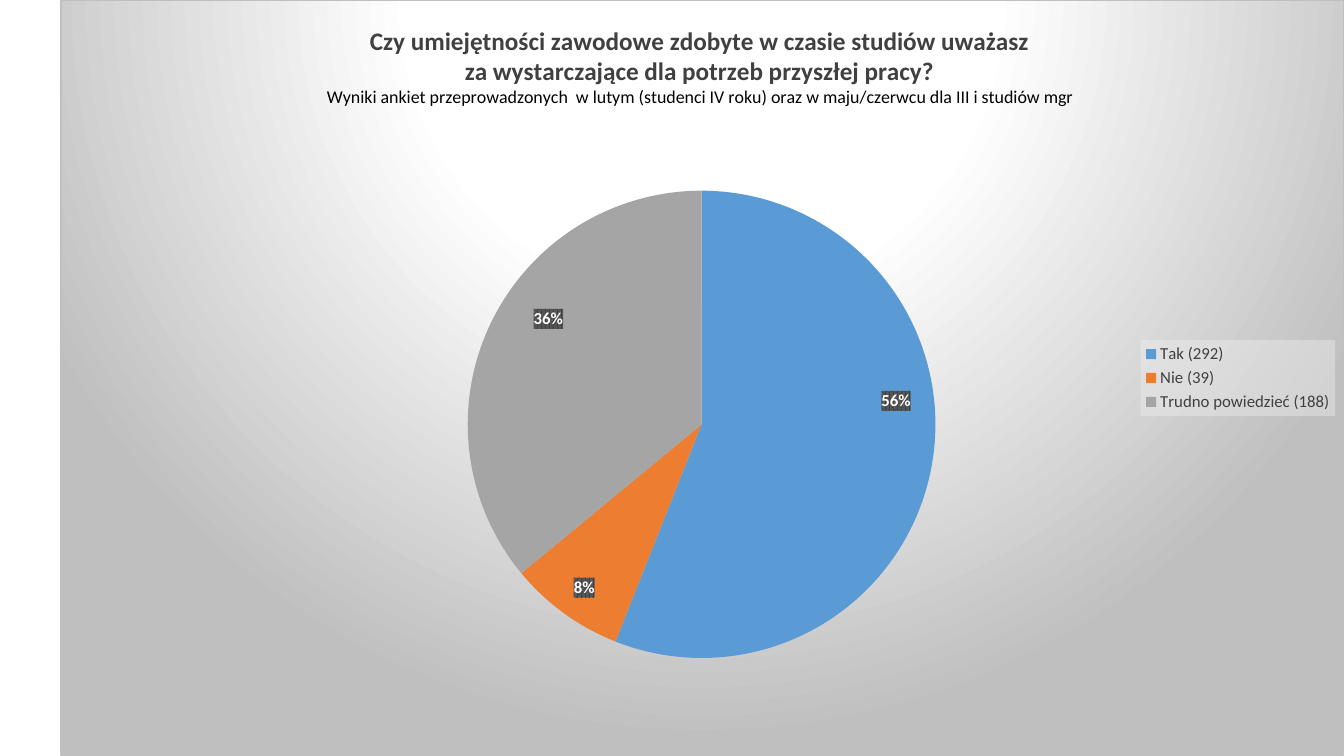
import copy

from lxml import etree
from pptx import Presentation
from pptx import util as u
from pptx.chart import data as chart_data
from pptx.dml import color
from pptx.enum import chart as chart_enum
from pptx.enum import text
from pptx.oxml import ns, parse_xml

# Name, share, colour, label shift from the slice centre
ANSWERS = [
    ("Tak (292)", 56, "5B9BD5", (0.062, -0.06)),
    ("Nie (39)", 8, "ED7D31", (-0.038, 0.091)),
    ("Trudno powiedzieć (188)", 36, "A5A5A5", (-0.037, -0.074)),
]
TITLE = [
    ("Czy umiejętności zawodowe zdobyte w czasie studiów uważasz", 18, True, "404040"),
    ("za wystarczające dla potrzeb przyszłej pracy?", 18, True, "404040"),
    ("Wyniki ankiet przeprowadzonych  w lutym (studenci IV roku) "
     "oraz w maju/czerwcu dla III i studiów mgr", 12.8, False, "000000"),
]


def rgb(value):
    return color.RGBColor.from_string(value)


def format_font(font, size, shade, bold=False):
    font.name = "Calibri"
    font.size = u.Pt(size)
    font.bold = bold
    font.color.rgb = rgb(shade)


def add_text(para, words, **style):
    span = para.add_run()
    span.text = words
    format_font(span.font, **style)


def solid(shade, opacity=100):
    return (f'<a:solidFill><a:srgbClr val="{shade}">'
            f'<a:alpha val="{opacity * 1000}"/></a:srgbClr></a:solidFill>')


def shape_style(content):
    return parse_xml(f'<c:spPr {ns.nsdecls("c", "a")}>{content}</c:spPr>')


def layout(**settings):
    """Manual chart layout in fractions of the chart area."""
    node = etree.Element(ns.qn("c:layout"))
    manual = etree.SubElement(node, ns.qn("c:manualLayout"))
    for name, value in settings.items():
        etree.SubElement(manual, ns.qn(f"c:{name}")).set("val", str(value))
    return node


def set_layout(parent, node, index):
    for old in parent.findall(ns.qn("c:layout")):
        parent.remove(old)
    parent.insert(index, node)


class SurveySlide:
    def __init__(self, deck):
        self.page = deck.slides.add_slide(deck.slide_layouts[6])

    def add_pie(self, left, top, width, height):
        data = chart_data.CategoryChartData()
        data.categories = [answer[0] for answer in ANSWERS]
        data.add_series("Series 1", [answer[1] for answer in ANSWERS])
        frame = self.page.shapes.add_chart(
            chart_enum.XL_CHART_TYPE.PIE, u.Inches(left), u.Inches(top),
            u.Inches(width), u.Inches(height), data)
        chart = frame.chart
        format_font(chart.font, 10, "000000")
        plot = chart.plots[0]
        plot.vary_by_categories = True
        for index, (_, _, shade, _) in enumerate(ANSWERS):
            fill = plot.series[0].points[index].format.fill
            fill.solid()
            fill.fore_color.rgb = rgb(shade)
        area = chart.element.find(".//" + ns.qn("c:plotArea"))
        set_layout(area, layout(layoutTarget="inner", xMode="edge", yMode="edge",
                                x=0.317, y=0.252, w=0.365, h=0.619), 0)
        return chart

    def add_background(self, chart):
        stops = "".join(
            f'<a:gs pos="{place * 1000}"><a:srgbClr val="{shade}"/></a:gs>'
            for place, shade in [(0, "FFFFFF"), (39, "FFFFFF"), (100, "BFBFBF")])
        chart.element.find(ns.qn("c:chart")).addnext(shape_style(
            f'<a:gradFill><a:gsLst>{stops}</a:gsLst><a:path path="circle">'
            '<a:fillToRect l="50000" t="-80000" r="50000" b="180000"/></a:path></a:gradFill>'
            f'<a:ln w="{u.Pt(0.75)}">{solid("BFBFBF")}</a:ln>'))

    def add_title(self, chart):
        box = chart.chart_title.text_frame
        for index, (words, size, bold, shade) in enumerate(TITLE):
            para = box.add_paragraph() if index else box.paragraphs[0]
            para.alignment = text.PP_ALIGN.CENTER
            add_text(para, words, size=size, bold=bold, shade=shade)
        chart.chart_title.include_in_layout = False
        set_layout(chart.element.find(".//" + ns.qn("c:title")),
                   layout(xMode="edge", yMode="edge", x=0.205, y=0.027), 1)

    def add_labels(self, chart):
        labels = chart.plots[0].series[0].data_labels
        labels.show_percentage = True
        labels.show_value = False
        labels.position = chart_enum.XL_LABEL_POSITION.CENTER
        format_font(labels.font, 12, "FFFFFF", bold=True)
        node = chart.element.find(".//" + ns.qn("c:ser") + "/" + ns.qn("c:dLbls"))
        node.find(ns.qn("c:txPr")).addprevious(shape_style(
            '<a:pattFill prst="pct75"><a:fgClr><a:srgbClr val="404040"/></a:fgClr>'
            '<a:bgClr><a:srgbClr val="595959"/></a:bgClr></a:pattFill>'))
        # Each label shares the style and is moved towards the rim
        shared = [part for part in node if part.tag != ns.qn("c:showLeaderLines")]
        for index, (_, _, _, (x, y)) in enumerate(ANSWERS):
            label = etree.Element(ns.qn("c:dLbl"))
            etree.SubElement(label, ns.qn("c:idx")).set("val", str(index))
            label.append(layout(x=x, y=y))
            label.extend(copy.deepcopy(part) for part in shared)
            node.insert(index, label)

    def add_legend(self, chart):
        chart.has_legend = True
        legend = chart.legend
        legend.position = chart_enum.XL_LEGEND_POSITION.RIGHT
        legend.include_in_layout = False
        format_font(legend.font, 12, "404040")
        node = chart.element.find(".//" + ns.qn("c:legend"))
        node.find(ns.qn("c:txPr")).addprevious(shape_style(solid("F2F2F2", 39)))


def main():
    deck = Presentation()
    deck.slide_width, deck.slide_height = u.Inches(13.33), u.Inches(7.5)
    survey = SurveySlide(deck)

    # Pie with its backdrop
    chart = survey.add_pie(0.6, 0, 12.73, 7.5)
    survey.add_background(chart)

    # Title, percentages and legend
    survey.add_title(chart)
    survey.add_labels(chart)
    survey.add_legend(chart)

    deck.save("out.pptx")


if __name__ == "__main__":
    main()
